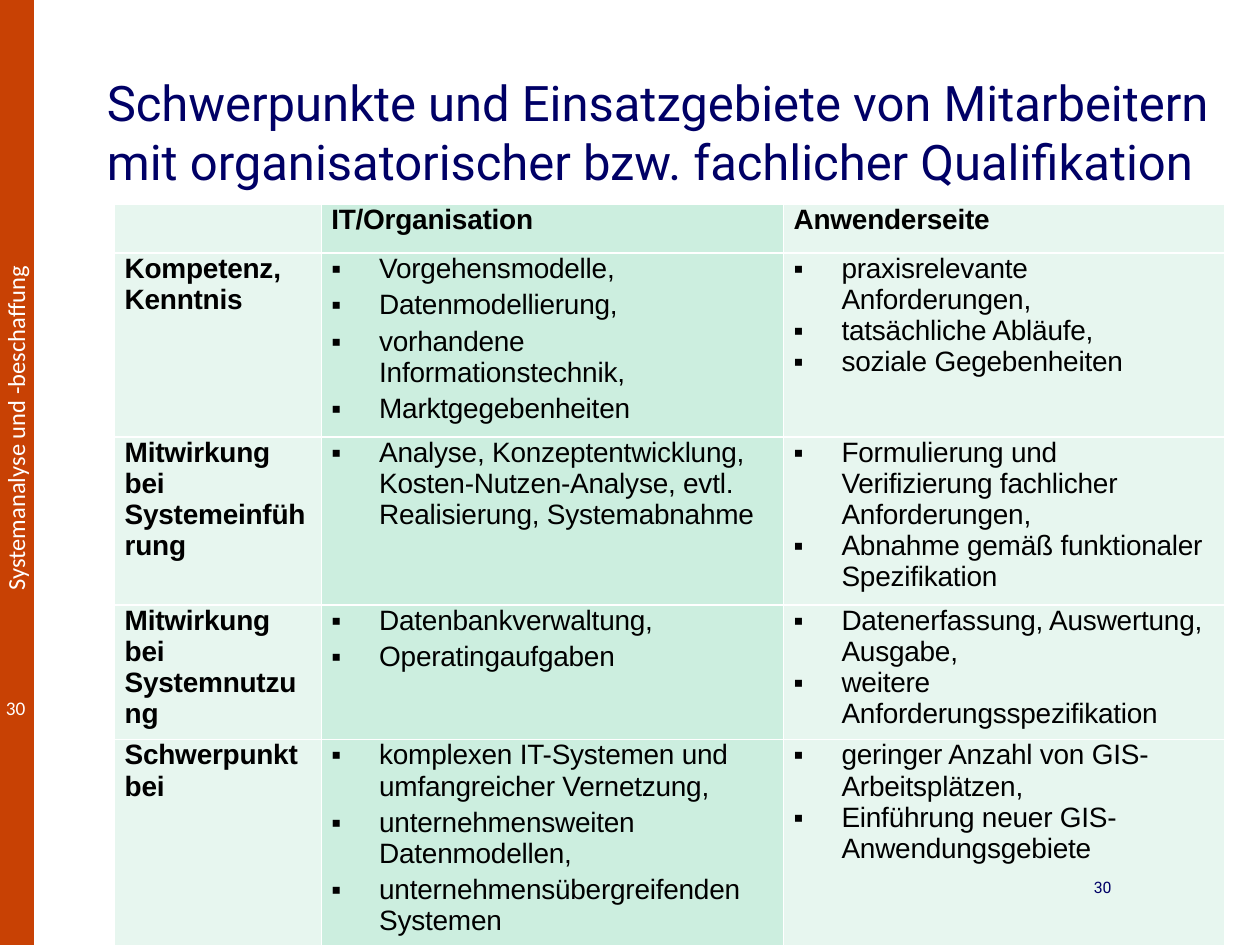
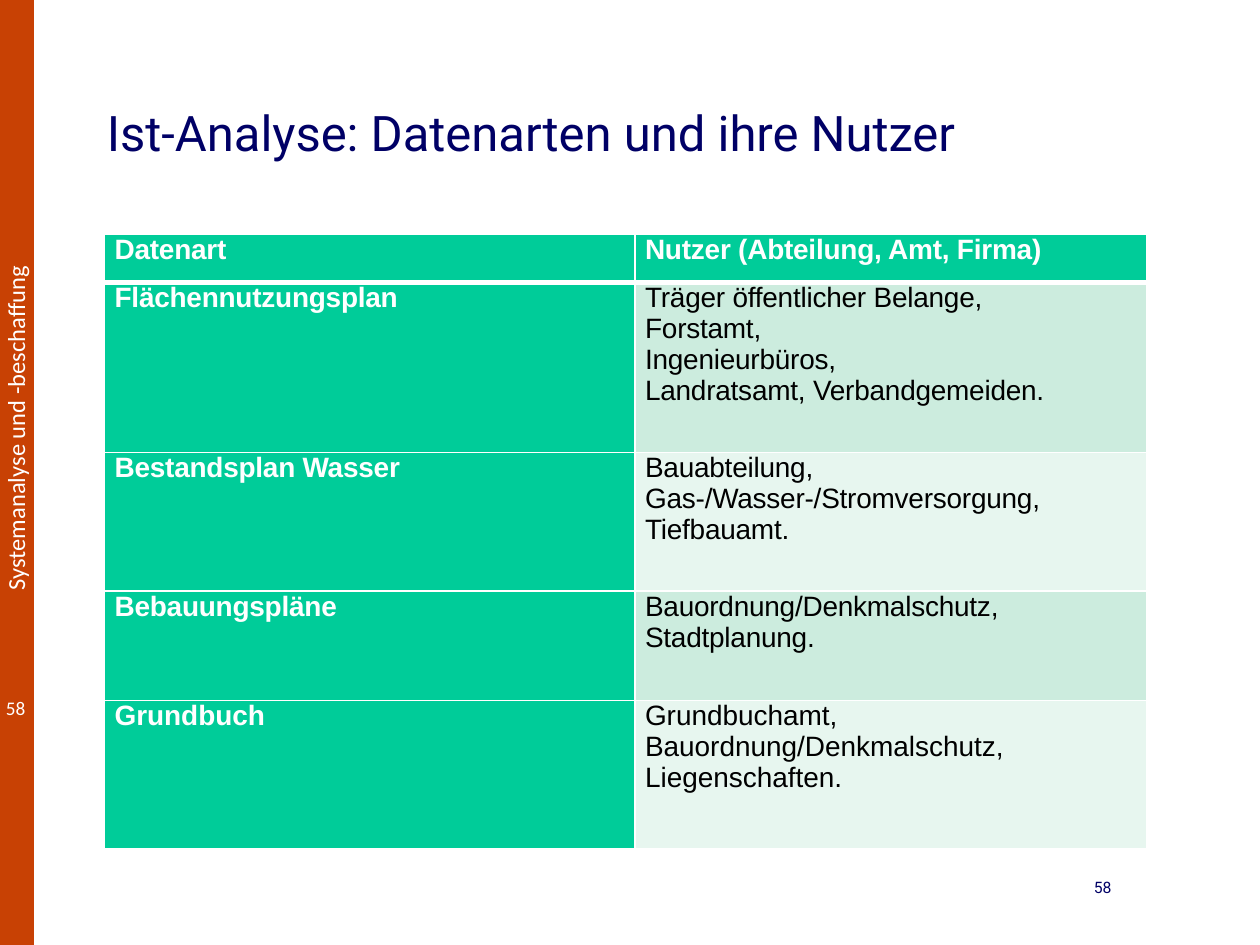
from dataclasses import dataclass
from typing import NamedTuple

from lxml import etree
from pptx import Presentation
from pptx.dml.color import RGBColor
from pptx.enum.shapes import MSO_SHAPE
from pptx.enum.text import MSO_ANCHOR, PP_ALIGN
from pptx.oxml.ns import qn
from pptx.util import Inches, Pt

RECTANGLE = MSO_SHAPE.RECTANGLE
TOP, MIDDLE = MSO_ANCHOR.TOP, MSO_ANCHOR.MIDDLE
LEFT, RIGHT = PP_ALIGN.LEFT, PP_ALIGN.RIGHT

COLORS = {
    "band": "C84104",
    "title": "000066",
    "white": "FFFFFF",
    "black": "000000",
    "green": "00CC99",
    "mint": "CCEEDF",
    "sage": "CCECDE",
    "pale": "E7F6EF",
}
COLUMNS, ROWS = 100, 75
PAGE_WIDTH, PAGE_HEIGHT = Inches(10), Inches(7.5)
COURSE = "Systemanalyse und -beschaffung"
HANGING = Inches(0.38)


class Area(NamedTuple):
    left: float
    top: float
    width: float
    height: float

    def place(self) -> tuple:
        across, down = PAGE_WIDTH / COLUMNS, PAGE_HEIGHT / ROWS
        return (round(self.left * across), round(self.top * down),
                round(self.width * across), round(self.height * down))


@dataclass(frozen=True)
class TextStyle:
    size: float
    font: str
    color: str
    bold: bool = False
    spacing: int = 0


@dataclass(frozen=True)
class Label:
    area: Area
    style: TextStyle
    align: int = LEFT
    anchor: int = TOP
    rotation: int = 0
    wrap: bool = True
    margin: float = 0.1


@dataclass(frozen=True)
class CellStyle:
    fill: str
    color: str = "black"
    bold: bool = False
    bullet: bool = False
    gap: float = 0


class Row(NamedTuple):
    height: float
    styles: tuple
    cells: tuple
    spacing: int = -10
    rule: float = 1


class Grid(NamedTuple):
    area: Area
    widths: tuple
    rows: tuple


class Topic(NamedTuple):
    title: str
    title_width: float
    number: str
    grid: Grid


BAND = Area(0, 0, 2.7, ROWS)
COURSE_LABEL = Label(Area(-12.8, 32.1, 28.1, 3.4), TextStyle(14, "Calibri", "white"),
                     rotation=270, wrap=False)
BAND_NUMBER = Label(Area(0, 54.8, 3, 3.3), TextStyle(11, "Calibri", "white"),
                    align=RIGHT, margin=0)
PAGE_NUMBER = Label(Area(69.2, 69.2, 20, 4.2), TextStyle(9, "Roboto", "title"), align=RIGHT)
TITLE_STYLE = TextStyle(28, "Roboto", "title")

HEAD_PALE = CellStyle("pale", bold=True)
HEAD_MINT = CellStyle("mint", bold=True)
STAFF_HEAD = (HEAD_PALE, HEAD_MINT, HEAD_PALE)
STAFF_BODY = (HEAD_PALE, CellStyle("mint", bullet=True, gap=3), CellStyle("pale", bullet=True))
KEY = CellStyle("green", "white", True)
USERS_SAGE = (KEY, CellStyle("sage"))
USERS_PALE = (KEY, CellStyle("pale"))

STAFF_ROWS = (
    Row(3.9, STAFF_HEAD, ((), ("IT/Organisation",), ("Anwenderseite",))),
    Row(14.4, STAFF_BODY, (
        ("Kompetenz, Kenntnis",),
        ("Vorgehensmodelle,", "Datenmodellierung,", "vorhandene Informationstechnik,",
         "Marktgegebenheiten"),
        ("praxisrelevante Anforderungen,", "tatsächliche Abläufe,",
         "soziale Gegebenheiten"))),
    Row(11.1, STAFF_BODY, (
        ("Mitwirkung bei Systemeinführung",),
        ("Analyse, Konzeptentwicklung, Kosten-Nutzen-Analyse, evtl. Realisierung, "
         "Systemabnahme",),
        ("Formulierung und Verifizierung fachlicher Anforderungen,",
         "Abnahme gemäß funktionaler Spezifikation"))),
    Row(10.7, STAFF_BODY, (
        ("Mitwirkung bei Systemnutzung",),
        ("Datenbankverwaltung,", "Operatingaufgaben"),
        ("Datenerfassung, Auswertung, Ausgabe,", "weitere Anforderungsspezifikation"))),
    Row(16.8, STAFF_BODY, (
        ("Schwerpunkt bei",),
        ("komplexen IT-Systemen und umfangreicher Vernetzung,",
         "unternehmensweiten Datenmodellen,", "unternehmensübergreifenden Systemen"),
        ("geringer Anzahl von GIS-Arbeitsplätzen,",
         "Einführung neuer GIS-Anwendungsgebiete"))),
)

USER_ROWS = (
    Row(3.8, (KEY, KEY), (("Datenart",), ("Nutzer (Abteilung, Amt, Firma)",)), rule=3),
    Row(13.5, USERS_SAGE, (
        ("Flächennutzungsplan",),
        ("Träger öffentlicher Belange,\nForstamt,\nIngenieurbüros,\n"
         "Landratsamt, Verbandgemeiden.",))),
    Row(11, USERS_PALE, (
        ("Bestandsplan Wasser",),
        ("Bauabteilung,\nGas-/Wasser-/Stromversorgung,\nTiefbauamt.",))),
    Row(8.7, USERS_SAGE, (
        ("Bebauungspläne",), ("Bauordnung/Denkmalschutz,\nStadtplanung.",))),
    Row(11.8, USERS_PALE, (
        ("Grundbuch",),
        ("Grundbuchamt,\nBauordnung/Denkmalschutz,\nLiegenschaften.",)), spacing=0),
)

TOPICS = (
    Topic("Schwerpunkte und Einsatzgebiete von Mitarbeitern mit organisatorischer "
          "bzw. fachlicher Qualifikation", 89.8, "30",
          Grid(Area(9.1, 16.2, 88.1, 56.9), (16.4, 36.7, 35), STAFF_ROWS)),
    Topic("Ist-Analyse: Datenarten und ihre Nutzer", 81.8, "58",
          Grid(Area(8.3, 18.6, 82.7, 48.8), (42.1, 40.6), USER_ROWS)),
)


def color_of(name: str) -> RGBColor:
    return RGBColor.from_string(COLORS[name])


def write(para, text: str, style: TextStyle) -> None:
    for index, line in enumerate(text.split("\n")):
        if index:
            para.add_line_break()
        span = para.add_run()
        span.text = line
        span.font.size = Pt(style.size)
        span.font.name = style.font
        span.font.bold = style.bold
        span.font.color.rgb = color_of(style.color)
        if style.spacing:
            span.font._element.set("spc", str(style.spacing))


def add_label(page, label: Label, text: str) -> None:
    box = page.shapes.add_textbox(*label.area.place())
    box.rotation = label.rotation
    frame = box.text_frame
    frame.word_wrap = label.wrap
    frame.vertical_anchor = label.anchor
    frame.margin_left = Inches(label.margin)
    para = frame.paragraphs[0]
    para.alignment = label.align
    write(para, text, label.style)


def add_bullet(para) -> None:
    properties = para._p.get_or_add_pPr()
    properties.set("marL", str(HANGING))
    properties.set("indent", str(-HANGING))
    etree.SubElement(properties, qn("a:buFont")).set("typeface", "Arial")
    etree.SubElement(properties, qn("a:buChar")).set("char", "▪")


def add_borders(cell, upper: float, lower: float) -> None:
    properties = cell._tc.get_or_add_tcPr()
    sides = (("L", 1), ("R", 1), ("T", upper), ("B", lower))
    for index, (side, width) in enumerate(sides):
        line = etree.Element(qn(f"a:ln{side}"), w=str(Pt(width)))
        fill = etree.SubElement(line, qn("a:solidFill"))
        etree.SubElement(fill, qn("a:srgbClr")).set("val", COLORS["white"])
        properties.insert(index, line)


def fill_cell(cell, texts: tuple, style: CellStyle, spacing: int) -> None:
    cell.fill.solid()
    cell.fill.fore_color.rgb = color_of(style.fill)
    cell.margin_left = cell.margin_right = Inches(0.08)
    cell.margin_top = cell.margin_bottom = 0
    frame = cell.text_frame
    if not texts:
        frame.paragraphs[0].font.size = Pt(16)
    text_style = TextStyle(16, "Arial", style.color, style.bold, spacing)
    for index, text in enumerate(texts):
        para = frame.add_paragraph() if index else frame.paragraphs[0]
        if index:
            para.space_before = Pt(style.gap)
        if style.bullet:
            add_bullet(para)
        write(para, text, text_style)


def add_grid(page, grid: Grid) -> None:
    table = page.shapes.add_table(len(grid.rows), len(grid.widths), *grid.area.place()).table
    table.first_row = table.horz_banding = False
    for column, width in zip(table.columns, grid.widths):
        column.width = round(width * PAGE_WIDTH / COLUMNS)
    upper = 1
    for table_row, row in zip(table.rows, grid.rows):
        table_row.height = round(row.height * PAGE_HEIGHT / ROWS)
        for cell, texts, style in zip(table_row.cells, row.cells, row.styles):
            fill_cell(cell, texts, style, row.spacing)
            add_borders(cell, upper, row.rule)
        upper = row.rule


def add_topic(deck, topic: Topic) -> None:
    page = deck.slides.add_slide(deck.slide_layouts[6])
    band = page.shapes.add_shape(RECTANGLE, *BAND.place())
    band.shadow.inherit = False
    band.fill.solid()
    band.fill.fore_color.rgb = color_of("band")
    band.line.fill.background()
    add_label(page, COURSE_LABEL, COURSE)
    add_label(page, BAND_NUMBER, topic.number)
    title = Label(Area(7.5, 6.7, topic.title_width, 7.5), TITLE_STYLE, anchor=MIDDLE)
    add_label(page, title, topic.title)
    add_grid(page, topic.grid)
    add_label(page, PAGE_NUMBER, topic.number)


def main() -> None:
    deck = Presentation()
    deck.slide_width, deck.slide_height = PAGE_WIDTH, PAGE_HEIGHT
    for topic in TOPICS:
        add_topic(deck, topic)
    deck.save("out.pptx")


if __name__ == "__main__":
    main()
